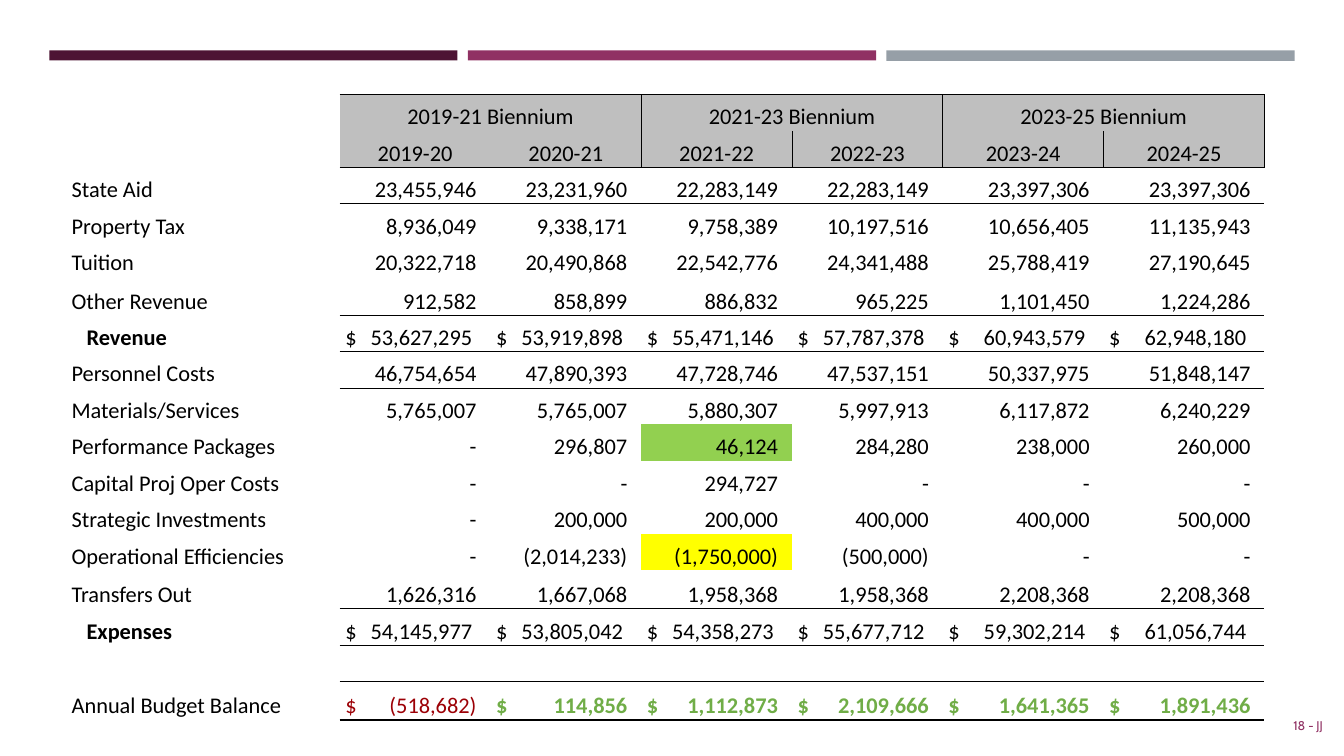
"""Build a slide with a six-year budget table grouped by biennium."""
from lxml.etree import SubElement, Element
from pptx import Presentation
from pptx.dml.color import RGBColor
from pptx.enum.shapes import MSO_SHAPE
from pptx.enum.text import MSO_ANCHOR, PP_ALIGN
from pptx.oxml.ns import qn
from pptx.util import Pt

BLACK = RGBColor(0x00, 0x00, 0x00)
PLUM = RGBColor(0x4D, 0x14, 0x34)
MAGENTA = RGBColor(0x90, 0x31, 0x63)
SLATE = RGBColor(0x96, 0x9F, 0xA7)
HEADER_GRAY = RGBColor(0xBF, 0xBF, 0xBF)
LIME = RGBColor(0x92, 0xD0, 0x50)
YELLOW = RGBColor(0xFF, 0xFF, 0x00)
DEFICIT_RED = RGBColor(0x9C, 0x00, 0x06)
SURPLUS_GREEN = RGBColor(0x70, 0xAD, 0x47)
NO_STYLE = "{2D5ABB26-0587-4C30-8999-92F81FD0307C}"

BUDGET = [
    ["", "2019-21 Biennium", "", "2021-23 Biennium", "", "2023-25 Biennium", ""],
    ["", "2019-20", "2020-21", "2021-22", "2022-23", "2023-24", "2024-25"],
    ["State Aid", "23,455,946", "23,231,960", "22,283,149", "22,283,149", "23,397,306", "23,397,306"],
    ["Property Tax", "8,936,049", "9,338,171", "9,758,389", "10,197,516", "10,656,405", "11,135,943"],
    ["Tuition", "20,322,718", "20,490,868", "22,542,776", "24,341,488", "25,788,419", "27,190,645"],
    ["Other Revenue", "912,582", "858,899", "886,832", "965,225", "1,101,450", "1,224,286"],
    ["Revenue", "53,627,295", "53,919,898", "55,471,146", "57,787,378", "60,943,579", "62,948,180"],
    ["Personnel Costs", "46,754,654", "47,890,393", "47,728,746", "47,537,151", "50,337,975", "51,848,147"],
    ["Materials/Services", "5,765,007", "5,765,007", "5,880,307", "5,997,913", "6,117,872", "6,240,229"],
    ["Performance Packages", "-", "296,807", "46,124", "284,280", "238,000", "260,000"],
    ["Capital Proj Oper Costs", "-", "-", "294,727", "-", "-", "-"],
    ["Strategic Investments", "-", "200,000", "200,000", "400,000", "400,000", "500,000"],
    ["Operational Efficiencies", "-", "(2,014,233)", "(1,750,000)", "(500,000)", "-", "-"],
    ["Transfers Out", "1,626,316", "1,667,068", "1,958,368", "1,958,368", "2,208,368", "2,208,368"],
    ["Expenses", "54,145,977", "53,805,042", "54,358,273", "55,677,712", "59,302,214", "61,056,744"],
    [""] * 7,
    ["Annual Budget Balance", "(518,682)", "114,856", "1,112,873", "2,109,666", "1,641,365", "1,891,436"],
]
COLUMN_WIDTHS = [191.5] + [107.7] * 4 + [114.9] * 2
TALL_ROWS = (5, 13, 16)
TOTAL_ROWS = (6, 14)
BALANCE_ROW = 16
RULES_ABOVE = {0: 0.5, 2: 0.5, 6: 0.5, 7: 0.5, 14: 0.5, 15: 0.5, 16: 0.5, 17: 2}
HIGHLIGHTS = {(9, 3): LIME, (12, 3): YELLOW}
DOLLAR_INDENT = 4


def draw_borders(cell, widths):
    properties = cell._tc.get_or_add_tcPr()
    sides = [side for side in ("lnL", "lnR", "lnT", "lnB") if widths.get(side)]
    for position, side in enumerate(sides):
        line = Element(qn(f"a:{side}"), w=str(Pt(widths[side])))
        fill = SubElement(line, qn("a:solidFill"))
        SubElement(fill, qn("a:srgbClr"), val=str(BLACK))
        properties.insert(position, line)


def add_right_tab(paragraph, position):
    tabs = Element(qn("a:tabLst"))
    SubElement(tabs, qn("a:tab"), pos=str(Pt(position)), algn="r")
    paragraph._p.get_or_add_pPr().insert(0, tabs)


presentation = Presentation()
presentation.slide_width, presentation.slide_height = Pt(960), Pt(540)
slide = presentation.slides.add_slide(presentation.slide_layouts[6])

for index, (color, height) in enumerate([(PLUM, 7.2), (MAGENTA, 7.2), (SLATE, 7.6)]):
    band = slide.shapes.add_shape(
        MSO_SHAPE.RECTANGLE, Pt(35.2 + index * 299), Pt(36), Pt(291.6), Pt(height))
    band.shadow.inherit = False
    band.fill.solid()
    band.fill.fore_color.rgb = color
    band.line.fill.background()

budget_frame = slide.shapes.add_table(
    len(BUDGET), len(COLUMN_WIDTHS), Pt(51.2), Pt(67.5), Pt(sum(COLUMN_WIDTHS)), Pt(447.2))
budget = budget_frame.table
budget.first_row = budget.horz_banding = False
for style in budget_frame.element.iter(qn("a:tableStyleId")):
    style.text = NO_STYLE
for column, width in zip(budget.columns, COLUMN_WIDTHS):
    column.width = Pt(width)

for r, entries in enumerate(BUDGET):
    budget.rows[r].height = Pt(27.5 if r in TALL_ROWS else 26.05)
    for c, entry in enumerate(entries):
        cell = budget.cell(r, c)
        is_header = r < 2 and c > 0
        is_dollar = c > 0 and (r in TOTAL_ROWS or r == BALANCE_ROW)
        cell.vertical_anchor = MSO_ANCHOR.BOTTOM
        cell.margin_left = cell.margin_right = cell.margin_top = cell.margin_bottom = 0
        paragraph = cell.text_frame.paragraphs[0]
        paragraph.text = f"$\t{entry}" if is_dollar else entry
        paragraph.font.name = "Calibri"
        paragraph.font.size = Pt(16)
        paragraph.font.color.rgb = BLACK

        if is_header:
            paragraph.alignment = PP_ALIGN.CENTER
        elif is_dollar:
            cell.margin_left = Pt(DOLLAR_INDENT)
            right_inset = 10 if r == BALANCE_ROW else 13
            add_right_tab(paragraph, COLUMN_WIDTHS[c] - DOLLAR_INDENT - right_inset)
        elif c > 0:
            paragraph.alignment = PP_ALIGN.RIGHT
            cell.margin_right = Pt(10)
        elif r in TOTAL_ROWS:
            paragraph.font.bold = True
            cell.margin_left = Pt(10.7)
        if is_dollar and r == BALANCE_ROW:
            is_deficit = entry.startswith("(")
            paragraph.font.color.rgb = DEFICIT_RED if is_deficit else SURPLUS_GREEN
            paragraph.font.bold = not is_deficit

        fill_color = HEADER_GRAY if is_header else HIGHLIGHTS.get((r, c))
        if fill_color is None:
            cell.fill.background()
        else:
            cell.fill.solid()
            cell.fill.fore_color.rgb = fill_color
        if c > 0:
            draw_borders(cell, {
                "lnL": 0.5 if is_header and c in (3, 5) else 0,
                "lnR": 0.5 if is_header and (r == 0 or c % 2 == 0) else 0,
                "lnT": RULES_ABOVE.get(r),
                "lnB": RULES_ABOVE.get(r + 1),
            })

for c in (1, 3, 5):
    budget.cell(0, c).merge(budget.cell(0, c + 1))

page_label = slide.shapes.add_textbox(Pt(869), Pt(504), Pt(83), Pt(28.8)).text_frame
page_label.word_wrap = True
page_label.vertical_anchor = MSO_ANCHOR.MIDDLE
page_number = page_label.paragraphs[0]
page_number.text = "18 - JJ"
page_number.alignment = PP_ALIGN.RIGHT
page_number.font.name = "Cabin"
page_number.font.size = Pt(9)
page_number.font.color.rgb = MAGENTA

presentation.save("out.pptx")
